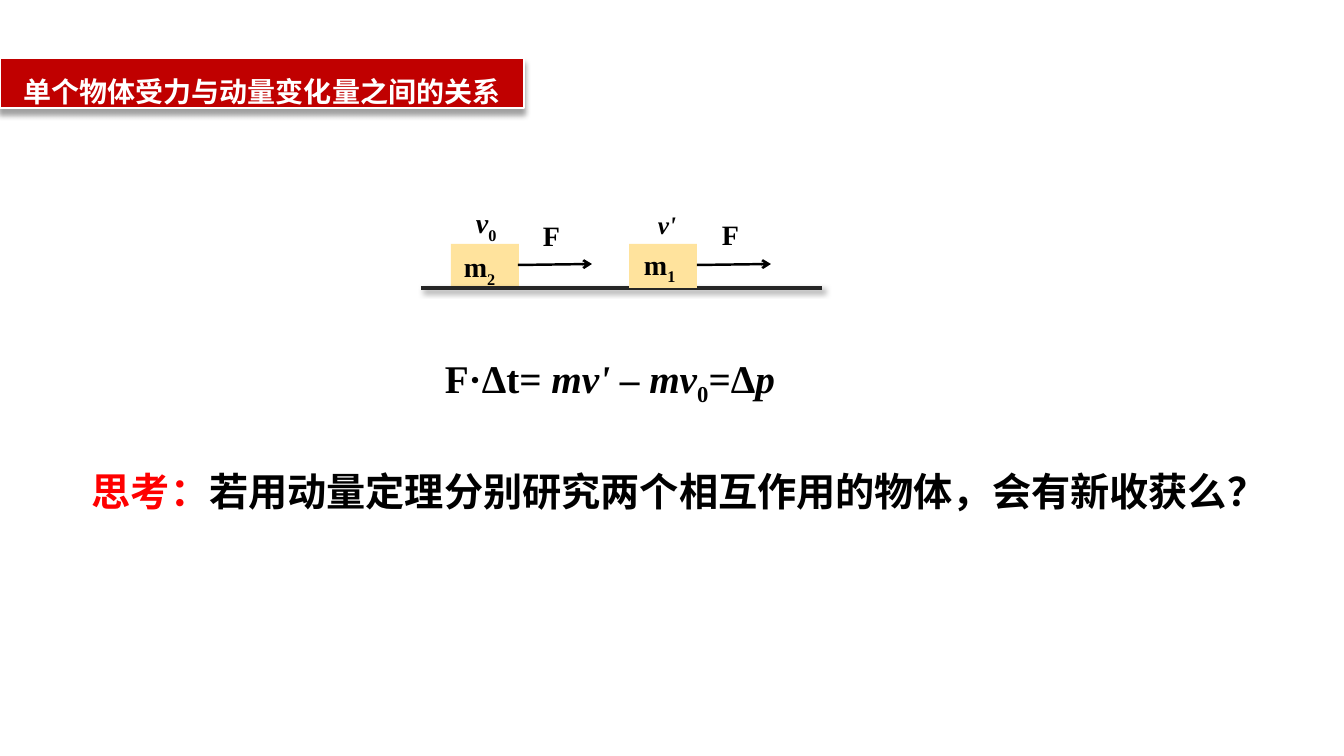
from lxml.etree import SubElement
from pptx import Presentation
from pptx.dml.color import RGBColor
from pptx.enum.shapes import MSO_CONNECTOR, MSO_SHAPE
from pptx.enum.text import MSO_ANCHOR, MSO_AUTO_SIZE, PP_ALIGN
from pptx.oxml import parse_xml
from pptx.oxml.ns import nsdecls, qn
from pptx.util import Pt

PX = 914400 / 100.8
COLORS = {"black": "000000", "white": "FFFFFF", "banner": "C00000",
          "accent": "FF0000", "block": "FFE39D", "ground": "262626"}
COLORS = {name: RGBColor.from_string(value) for name, value in COLORS.items()}
SERIF, SANS = "Times New Roman", "Noto Sans CJK JP"
SHADOW = ('<a:effectLst {}><a:outerShdw blurRad="50800" dist="{}" dir="{}" algn="t" rotWithShape="0">'
          '<a:srgbClr val="000000"><a:alpha val="{}"/></a:srgbClr></a:outerShdw></a:effectLst>')


def write(shape, runs, size, font_name=SERIF):
    paragraph = shape.text_frame.paragraphs[0]
    for text, style, color in runs:
        run = paragraph.add_run()
        run.text = text
        formats = {"size": Pt(size), "name": font_name, "bold": True, "italic": style == "italic"}
        for attribute, value in formats.items():
            setattr(run.font, attribute, value)
        run.font.color.rgb = COLORS[color]
        if style == "sub":
            run.font._element.set("baseline", "-25000")
        if style == "chinese":
            SubElement(run.font._element, qn("a:ea"), typeface=SANS)


def draw_line(start_x, start_y, end_x, end_y, color, width):
    points = [round(value * PX) for value in (start_x, start_y, end_x, end_y)]
    line = slide.shapes.add_connector(MSO_CONNECTOR.STRAIGHT, *points)
    line.line.color.rgb = COLORS[color]
    line.line.width = Pt(width)
    return line


presentation = Presentation()
presentation.slide_width = round(1344 * PX)
presentation.slide_height = round(756 * PX)
slide = presentation.slides.add_slide(presentation.slide_layouts[5])

title = slide.shapes.title
for attribute, value in {"left": 0, "top": 58, "width": 524, "height": 50}.items():
    setattr(title, attribute, round(value * PX))
title_properties = title._element.spPr
title_properties.append(parse_xml(f'<a:prstGeom {nsdecls("a")} prst="roundRect"><a:avLst/></a:prstGeom>'))
title.fill.solid()
title.fill.fore_color.rgb = COLORS["banner"]
title.line.color.rgb = COLORS["white"]
title.line.width = Pt(2)
title_properties.append(parse_xml(SHADOW.format(nsdecls("a"), 50800, 5400000, 36000)))
title_formats = {"auto_size": MSO_AUTO_SIZE.NONE, "vertical_anchor": MSO_ANCHOR.MIDDLE, "word_wrap": True}
for attribute, value in title_formats.items():
    setattr(title.text_frame, attribute, value)
title_paragraph = title.text_frame.paragraphs[0]
title_paragraph.alignment = PP_ALIGN.CENTER
title_paragraph.line_spacing = 1.5
write(title, [("单个物体受力与动量变化量之间的关系", "chinese", "white")], 20)

blocks = []
for left in (451, 629):
    box = [round(value * PX) for value in (left, 244, 68, 44)]
    block = slide.shapes.add_shape(MSO_SHAPE.RECTANGLE, *box)
    block.shadow.inherit = False
    block.fill.solid()
    block.fill.fore_color.rgb = COLORS["block"]
    block.line.fill.background()
    blocks.append(block)

ground = draw_line(421, 288, 822, 288, "ground", 2.25)
ground._element.spPr.append(parse_xml(SHADOW.format(nsdecls("a"), 38100, 2700000, 50000)))
ground._element.addnext(blocks[1]._element)

for left in (518, 697):
    arrow = draw_line(left, 265, left + 74, 264, "black", 1.75)
    SubElement(arrow.line._get_or_add_ln(), qn("a:tailEnd"), type="arrow")
    SubElement(arrow._element.spPr, qn("a:effectLst"))

labels = [
    ((533, 214, 60, 44), 20, SERIF, [("F", "", "black")]),
    ((712, 213, 60, 44), 20, SERIF, [("F", "", "black")]),
    ((466, 201, 60, 44), 20, SERIF, [("v", "italic", "black"), ("0", "sub", "black")]),
    ((648, 204, 38, 40), 18, SERIF, [("v'", "italic", "black")]),
    ((454, 245, 62, 44), 20, SERIF, [("m", "", "black"), ("2", "sub", "black")]),
    ((634, 243, 62, 44), 20, SERIF, [("m", "", "black"), ("1", "sub", "black")]),
    ((435, 349, 474, 57), 28, SERIF, [
        ("F·Δt= ", "", "black"), ("mv' ", "italic", "black"), ("–", "", "black"),
        (" mv", "italic", "black"), ("0", "sub", "black"), ("=Δ", "", "black"),
        ("p", "italic", "black")]),
    ((82, 462, 1180, 57), 28, SANS, [
        ("思考：", "chinese", "accent"),
        ("若用动量定理分别研究两个相互作用的物体，会有新收获么？", "chinese", "black")]),
]
for box, size, font_name, runs in labels:
    label = slide.shapes.add_textbox(*[round(value * PX) for value in box])
    label.text_frame.word_wrap = True
    label.text_frame.auto_size = MSO_AUTO_SIZE.SHAPE_TO_FIT_TEXT
    write(label, runs, size, font_name)

presentation.save("out.pptx")
